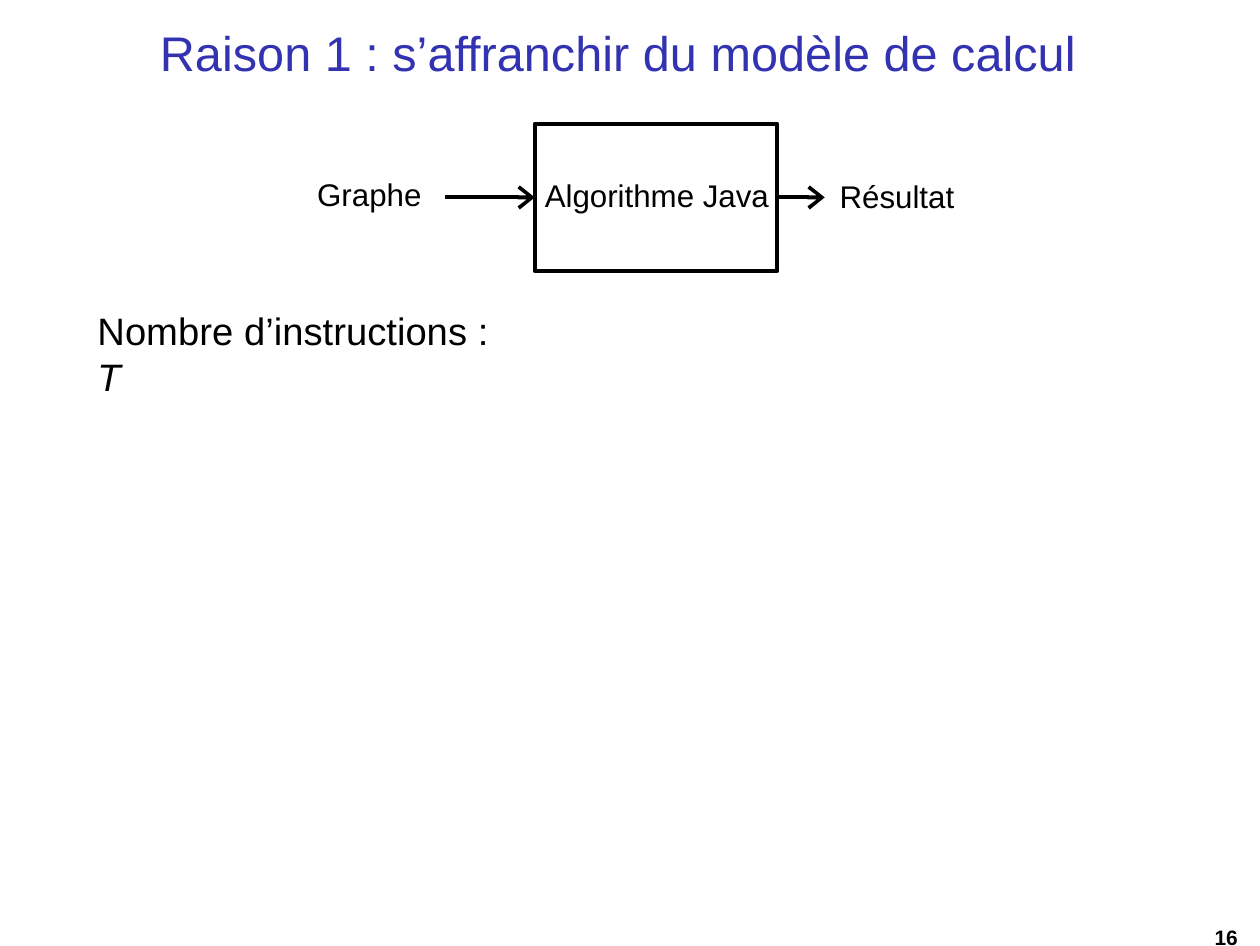
from dataclasses import dataclass

import pptx
import pptx.dml.color
import pptx.enum.shapes
import pptx.enum.text
import pptx.oxml
import pptx.oxml.ns
import pptx.shapes.autoshape
import pptx.shapes.connector
import pptx.slide
import pptx.text.text
import pptx.util
from pptx.util import Inches

BLACK = pptx.dml.color.RGBColor(0x00, 0x00, 0x00)
TITLE_BLUE = pptx.dml.color.RGBColor(0x33, 0x33, 0xB2)
FONT_NAME = "Arial"
PAGE_WIDTH = pptx.util.Pt(363)
PAGE_HEIGHT = pptx.util.Pt(272.5)
LINE_WIDTH = pptx.util.Pt(1.19)
FLOW_MIDDLE = 0.79


@dataclass
class Label:
    text: str
    left: float
    top: float
    width: float
    height: float
    size: float
    bold: bool = False
    italic_end: str = ""


LABELS = [
    Label("Graphe", 1.26, 0.69, 0.44, 0.18, 9),
    Label("Résultat", 3.35, 0.7, 0.48, 0.18, 9),
    Label("Nombre d’instructions : ", 0.38, 1.22, 1.68, 0.39, 11, italic_end="T"),
    Label("16", 4.85, 3.69, 0.12, 0.13, 6, bold=True),
]


def set_frame(frame: pptx.text.text.TextFrame, left: float, top: float, bottom: float = 0,
              anchor: pptx.enum.text.MSO_ANCHOR = pptx.enum.text.MSO_ANCHOR.TOP) -> None:
    frame.margin_left, frame.margin_top = Inches(left), Inches(top)
    frame.margin_right, frame.margin_bottom = 0, Inches(bottom)
    frame.vertical_anchor = anchor
    frame.word_wrap = True
    frame.auto_size = pptx.enum.text.MSO_AUTO_SIZE.NONE


def format_para(para: pptx.text.text._Paragraph, size: float,
                color: pptx.dml.color.RGBColor = BLACK, bold: bool = False) -> None:
    para.alignment = pptx.enum.text.PP_ALIGN.LEFT
    for span in para.runs:
        span.font.name = FONT_NAME
        span.font.size = pptx.util.Pt(size)
        span.font.bold = bold
        span.font.color.rgb = color


def add_title(page: pptx.slide.Slide, text: str) -> None:
    title = page.shapes.title
    title.left, title.top = Inches(0.63), Inches(0.07)
    title.width, title.height = Inches(3.78), Inches(0.27)
    set_frame(title.text_frame, 0.01, 0.02)
    title.text_frame.text = text
    para = title.text_frame.paragraphs[0]
    para.line_spacing = 1.0
    format_para(para, 14, TITLE_BLUE)


def add_label(page: pptx.slide.Slide, label: Label) -> None:
    box = page.shapes.add_textbox(Inches(label.left), Inches(label.top),
                                  Inches(label.width), Inches(label.height))
    set_frame(box.text_frame, 0.01, 0.01)
    para = box.text_frame.paragraphs[0]
    para.text = label.text
    if label.italic_end:
        span = para.add_run()
        span.text = label.italic_end
        span.font.italic = True
    format_para(para, label.size, bold=label.bold)


def add_algorithm_box(page: pptx.slide.Slide, text: str) -> pptx.shapes.autoshape.Shape:
    height = 0.59
    box = page.shapes.add_shape(pptx.enum.shapes.MSO_SHAPE.RECTANGLE, Inches(2.14),
                                Inches(FLOW_MIDDLE - height / 2), Inches(0.97), Inches(height))
    box.shadow.inherit = False
    box.fill.background()
    box.line.color.rgb = BLACK
    box.line.width = LINE_WIDTH
    set_frame(box.text_frame, 0.04, 0, 0.02, pptx.enum.text.MSO_ANCHOR.MIDDLE)
    box.text_frame.text = text
    format_para(box.text_frame.paragraphs[0], 9)
    return box


def add_arrow(page: pptx.slide.Slide, start: float, end: float) -> pptx.shapes.connector.Connector:
    arrow = page.shapes.add_connector(pptx.enum.shapes.MSO_CONNECTOR.STRAIGHT,
                                      Inches(start), Inches(FLOW_MIDDLE),
                                      Inches(end), Inches(FLOW_MIDDLE))
    arrow.line.color.rgb = BLACK
    arrow.line.width = LINE_WIDTH
    head = pptx.oxml.parse_xml(
        f'<a:tailEnd {pptx.oxml.ns.nsdecls("a")} type="arrow" w="med" len="sm"/>')
    arrow.line._get_or_add_ln().append(head)
    arrow._element.spPr.append(
        pptx.oxml.parse_xml(f'<a:effectLst {pptx.oxml.ns.nsdecls("a")}/>'))
    return arrow


def main() -> None:
    deck = pptx.Presentation()
    deck.slide_width, deck.slide_height = PAGE_WIDTH, PAGE_HEIGHT
    page = deck.slides.add_slide(deck.slide_layouts[5])
    add_title(page, "Raison 1 : s’affranchir du modèle de calcul")

    # Flow from the graph through the algorithm to the result
    algorithm = add_algorithm_box(page, "Algorithme Java")
    add_arrow(page, 1.78, 2.14).end_connect(algorithm, 1)
    add_arrow(page, 3.11, 3.3).begin_connect(algorithm, 3)

    # Flow labels, instruction count and page number
    for label in LABELS:
        add_label(page, label)

    deck.save("out.pptx")


if __name__ == "__main__":
    main()
